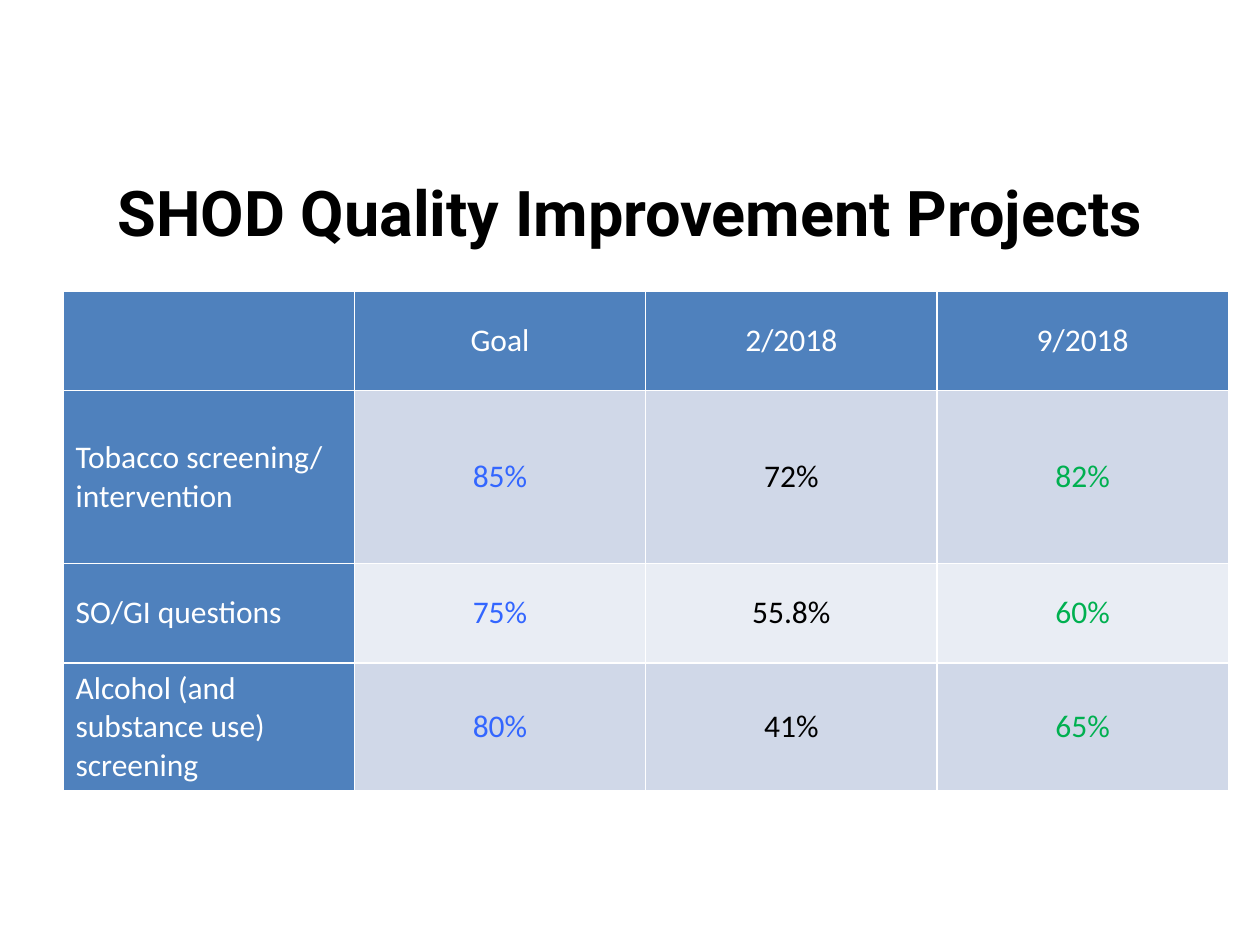
from dataclasses import dataclass

import pptx
import pptx.dml.color
import pptx.enum.text
import pptx.oxml
import pptx.oxml.ns
import pptx.util

Pt = pptx.util.Pt
RGB = pptx.dml.color.RGBColor.from_string
ALIGN = pptx.enum.text.PP_ALIGN
MIDDLE = pptx.enum.text.MSO_ANCHOR.MIDDLE


@dataclass(frozen=True)
class Theme:
    """Colours, fonts and type sizes of the slide."""
    title_font: str = "Roboto"
    body_font: str = "Calibri"
    title_size: int = 36
    body_size: int = 18
    title: str = "000000"
    header_fill: str = "4F81BD"
    header_text: str = "FFFFFF"
    bands: tuple = ("D0D8E8", "E9EDF4")
    columns: tuple = ("FFFFFF", "3366FF", "000000", "00B050")
    border: str = "FFFFFF"
    border_width: int = 1


THEME = Theme()
ROWS = [
    ("", "Goal", "2/2018", "9/2018"),
    ("Tobacco screening/ intervention", "85%", "72%", "82%"),
    ("SO/GI questions", "75%", "55.8%", "60%"),
    ("Alcohol (and substance use) screening", "80%", "41%", "65%"),
]
ROW_HEIGHTS = (57, 98.6, 57, 72)


def style_paragraph(p, font, size, color, align, bold=False):
    """Set the alignment and font of a paragraph."""
    p.alignment = align
    p.font.name = font
    p.font.size = Pt(size)
    p.font.bold = bold
    p.font.color.rgb = RGB(color)


def add_borders(cell):
    """Draw the four borders of a table cell."""
    tc_pr = cell._tc.get_or_add_tcPr()
    for side in "LRTB":
        tc_pr.append(pptx.oxml.parse_xml(
            f'<a:ln{side} {pptx.oxml.ns.nsdecls("a")} w="{Pt(THEME.border_width)}">'
            f'<a:solidFill><a:srgbClr val="{THEME.border}"/></a:solidFill></a:ln{side}>'))


def fill_cell(cell, text, row, col):
    """Write and format one cell by its row and column."""
    is_header = row == 0 or col == 0
    add_borders(cell)
    cell.fill.solid()
    cell.fill.fore_color.rgb = RGB(
        THEME.header_fill if is_header else THEME.bands[(row - 1) % 2])
    cell.vertical_anchor = MIDDLE
    cell.text = text
    style_paragraph(cell.text_frame.paragraphs[0], THEME.body_font, THEME.body_size,
                    THEME.header_text if is_header else THEME.columns[col],
                    ALIGN.LEFT if col == 0 else ALIGN.CENTER)


def place_title(s, text, left, top, width, height):
    """Move and format the title placeholder."""
    sp = s.shapes.title
    sp.left, sp.top, sp.width, sp.height = map(Pt, (left, top, width, height))
    tf = sp.text_frame
    tf.text = text
    tf.vertical_anchor = MIDDLE
    style_paragraph(tf.paragraphs[0], THEME.title_font, THEME.title_size,
                    THEME.title, ALIGN.CENTER, bold=True)


def place_table(s, rows, heights, left, top, width):
    """Add the results table with equal columns."""
    n_cols = len(rows[0])
    table = s.shapes.add_table(len(rows), n_cols, Pt(left), Pt(top),
                               Pt(width), Pt(sum(heights))).table
    for column in table.columns:
        column.width = Pt(width / n_cols)
    for r, (values, height) in enumerate(zip(rows, heights)):
        table.rows[r].height = Pt(height)
        for c, text in enumerate(values):
            fill_cell(table.cell(r, c), text, r, c)


def main():
    """Build the slide and save it."""
    prs = pptx.Presentation()
    prs.slide_width, prs.slide_height = Pt(720), Pt(540)
    s = prs.slides.add_slide(prs.slide_layouts[5])
    place_title(s, "SHOD Quality Improvement Projects", 36, 74, 648, 93.6)
    place_table(s, ROWS, ROW_HEIGHTS, 36, 166.3, 666)
    prs.save("out.pptx")


if __name__ == "__main__":
    main()
